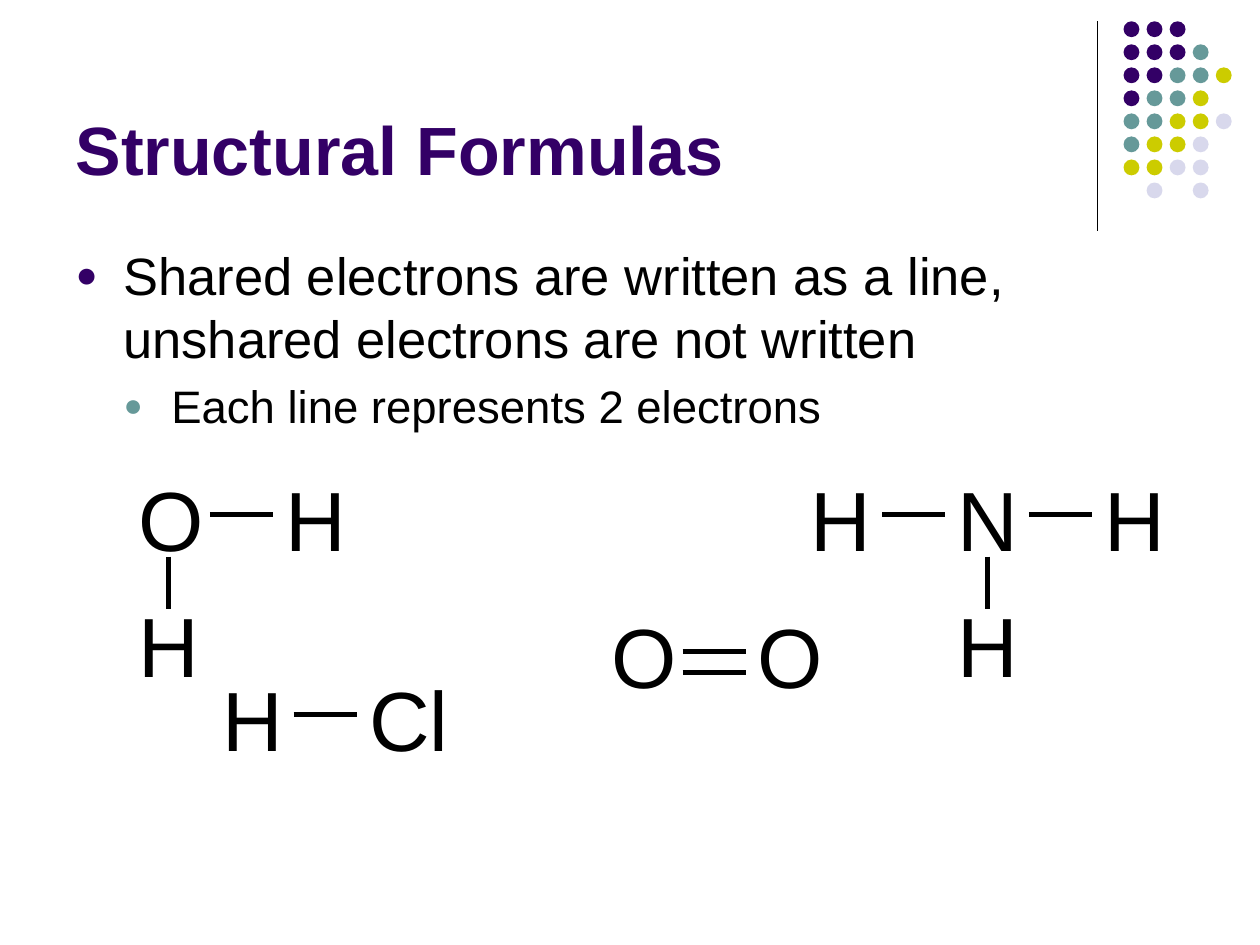
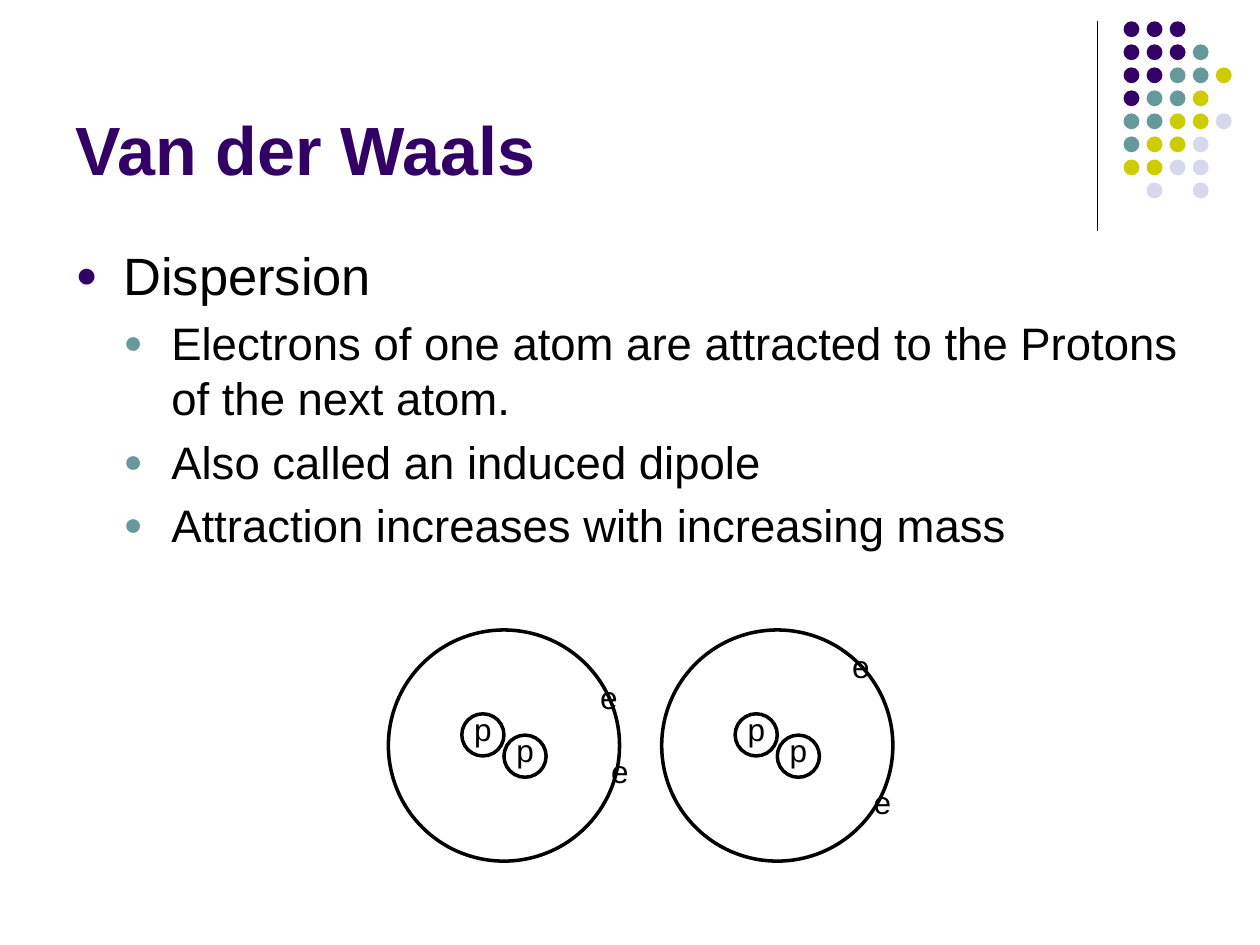
import pptx
import pptx.util
import pptx.dml.color
import pptx.enum.shapes
import pptx.enum.text
import lxml.etree
import pptx.oxml.ns

Cm, Pt = pptx.util.Cm, pptx.util.Pt
RGB = pptx.dml.color.RGBColor
OVAL = pptx.enum.shapes.MSO_SHAPE.OVAL
FIT = pptx.enum.text.MSO_AUTO_SIZE
qn = pptx.oxml.ns.qn

PURPLE = RGB(0x33, 0x00, 0x66)
TEAL = RGB(0x66, 0x99, 0x99)
LIME = RGB(0xCC, 0xCC, 0x00)
PALE = RGB(0xD8, 0xD8, 0xEC)
BLACK = RGB(0x00, 0x00, 0x00)
FONT = "Arial"

DOTS = ["PPP", "PPPT", "PPTTL", "PTTL", "TTLLA", "TLLA", "LLAA", " A A"]
HUES = {"P": PURPLE, "T": TEAL, "L": LIME, "A": PALE}

# Text size, bullet colour and indent for each list level
LEVELS = [(30, PURPLE, 0.96), (26, TEAL, 1.93)]

PAGES = [
    ("Structural Formulas", [
        "Shared electrons are written as a line, unshared electrons are not written",
        "Each line represents 2 electrons"]),
    ("Van der Waals", [
        "Dispersion",
        "Electrons of one atom are attracted to the Protons of the next atom.",
        "Also called an induced dipole",
        "Attraction increases with increasing mass"]),
]


def line(shapes, x1, y1, x2, y2, width):
    link = shapes.add_connector(pptx.enum.shapes.MSO_CONNECTOR.STRAIGHT,
                                Cm(x1), Cm(y1), Cm(x2), Cm(y2))
    link.line.color.rgb = BLACK
    link.line.width = Pt(width)
    lxml.etree.SubElement(link._element.spPr, qn("a:effectLst"))


def label(shapes, text, x, y, wide, high, size):
    box = shapes.add_textbox(Cm(x), Cm(y), Cm(wide), Cm(high))
    frame = box.text_frame
    frame.text = text
    frame.word_wrap = False
    frame.auto_size = FIT.SHAPE_TO_FIT_TEXT
    font = frame.paragraphs[0].runs[0].font
    font.name, font.size, font.color.rgb = FONT, Pt(size), BLACK


deck = pptx.Presentation()
deck.slide_width, deck.slide_height = Cm(25.4), Cm(19.05)
slides = []

# Frame, title and list of each slide
for head, items in PAGES:
    slide = deck.slides.add_slide(deck.slide_layouts[1])
    slides.append(slide)

    line(slide.shapes, 22.12, 0.43, 22.12, 4.65, 0.75)
    group = slide.shapes.add_group_shape()
    for row, marks in enumerate(DOTS):
        for col, mark in enumerate(marks):
            if mark == " ":
                continue
            dot = group.shapes.add_shape(
                OVAL, Cm(22.65 + 1.86 * col / 4), Cm(0.43 + 3.25 * row / 7),
                Cm(0.32), Cm(0.32))
            dot.shadow.inherit = False
            dot.fill.solid()
            dot.fill.fore_color.rgb = HUES[mark]
            dot.line.fill.background()

    title = slide.shapes.title
    title.left, title.top, title.width, title.height = Cm(1.27), Cm(0.33), Cm(20.96), Cm(3.61)
    title.text_frame.text = head
    title.text_frame.auto_size = FIT.NONE
    title.text_frame.vertical_anchor = pptx.enum.text.MSO_ANCHOR.BOTTOM
    para = title.text_frame.paragraphs[0]
    para.alignment = pptx.enum.text.PP_ALIGN.LEFT
    font = para.runs[0].font
    font.name, font.size, font.bold, font.color.rgb = FONT, Pt(39), True, PURPLE

    body = slide.placeholders[1]
    body.left, body.top, body.width, body.height = Cm(1.27), Cm(4.78), Cm(22.86), Cm(12.24)
    body.text_frame.text = "\n".join(items)
    body.text_frame.auto_size = FIT.NONE
    for num, para in enumerate(body.text_frame.paragraphs):
        para.level = min(num, 1)
        size, hue, indent = LEVELS[para.level]
        font = para.runs[0].font
        font.name, font.size, font.color.rgb = FONT, Pt(size), BLACK
        props = para._p.get_or_add_pPr()
        props.set("marL", str(Cm(indent)))
        props.set("indent", str(-Cm(0.96)))
        tint = lxml.etree.SubElement(props, qn("a:buClr"))
        lxml.etree.SubElement(tint, qn("a:srgbClr"), val=str(hue))
        lxml.etree.SubElement(props, qn("a:buSzPct"), val="70000")
        lxml.etree.SubElement(props, qn("a:buFont"), typeface=FONT)
        lxml.etree.SubElement(props, qn("a:buChar"), char="●")

# Molecules: left, top, bond order, atoms as (symbol, column, row);
# each atom is bonded to its neighbour on the left or above
MOLES = [
    (2.54, 9.31, 1, [("O", 0, 0), ("H", 1, 0), ("H", 0, 1)]),
    (4.23, 13.34, 1, [("H", 0, 0), ("Cl", 1, 0)]),
    (16.09, 9.31, 1, [("H", 0, 0), ("N", 1, 0), ("H", 2, 0), ("H", 1, 1)]),
    (12.07, 12.07, 2, [("O", 0, 0), ("O", 1, 0)]),
]
WIDE = {"O": 1.85, "H": 1.75, "N": 1.75, "Cl": 2.13}
STEP, DROP = 2.96, 2.54

for left, top, order, atoms in MOLES:
    group = slides[0].shapes.add_group_shape()
    for atom, col, row in atoms:
        x, y = left + col * STEP, top + row * DROP
        label(group.shapes, atom, x, y, WIDE[atom], 2.31, 48)
        if row:
            line(group.shapes, x + 0.85, y - 0.63, x + 0.85, y + 0.42, 3)
        elif col:
            for bond in range(order):
                high = y + 1.06 + bond * 0.42
                line(group.shapes, x - 1.27, high, x, high, 3)

# Two neighbouring atoms: left edge and places of the electrons
SHELLS = [
    (7.83, [(12.07, 15.03), (11.85, 13.55)]),
    (13.34, [(17.36, 15.66), (16.93, 12.91)]),
]
SHELL_TOP = 12.7

for left, charges in SHELLS:
    protons = [(left + 1.48, SHELL_TOP + 1.69), (left + 2.33, SHELL_TOP + 2.12)]
    rings = [(left, SHELL_TOP, 4.66)] + [(x, y, 0.85) for x, y in protons]
    for x, y, size in rings:
        ring = slides[1].shapes.add_shape(OVAL, Cm(x), Cm(y), Cm(size), Cm(size))
        ring.shadow.inherit = False
        ring.fill.background()
        ring.line.color.rgb = BLACK
        ring.line.width = Pt(2)
    for x, y in protons:
        label(slides[1].shapes, "p", x, y - 0.21, 0.86, 1.02, 18)
    for x, y in charges:
        label(slides[1].shapes, "e", x, y, 0.86, 1.02, 18)

deck.save("out.pptx")
